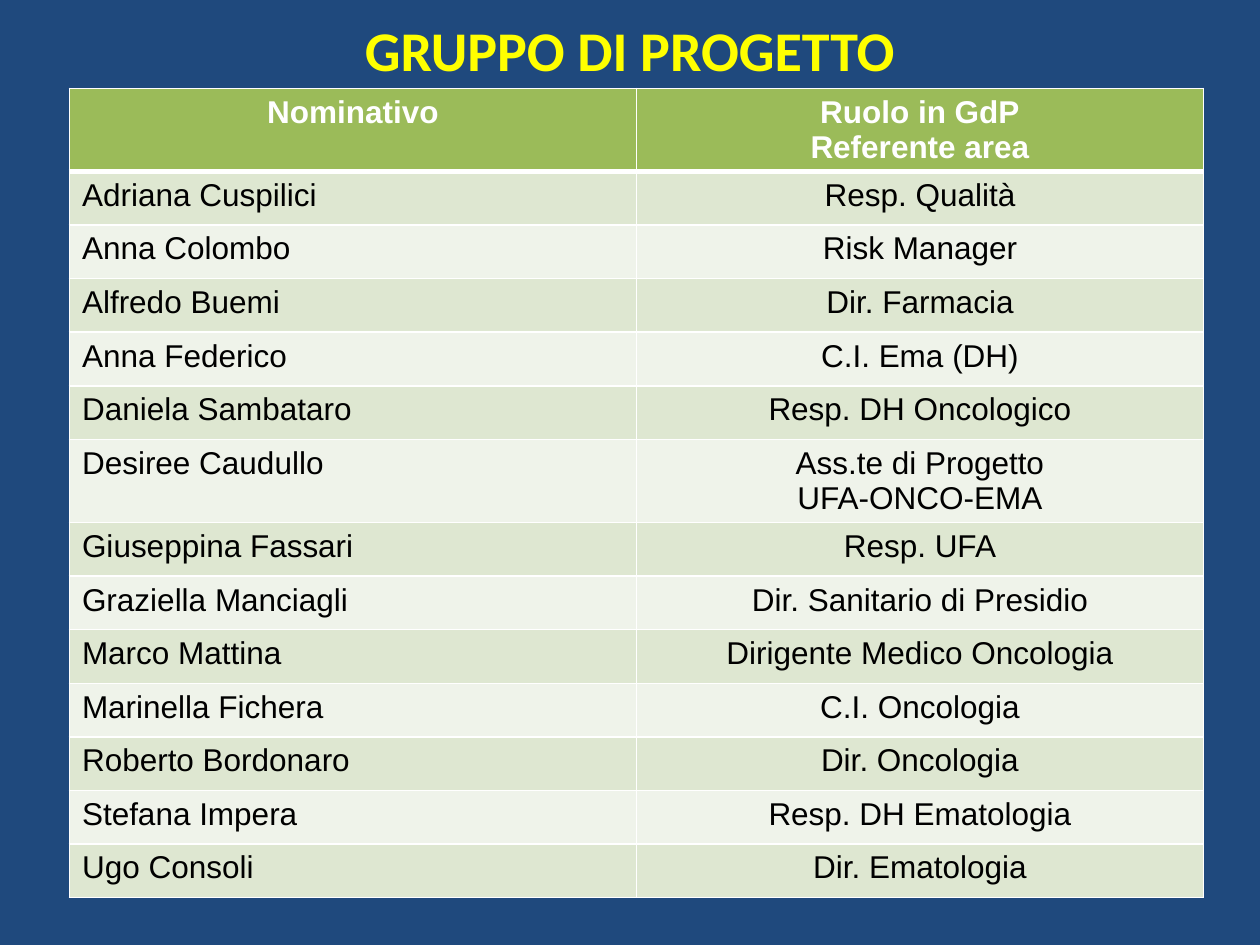
from lxml.etree import SubElement as Sub
from pptx import Presentation
from pptx.dml.color import RGBColor as RGB
from pptx.enum.text import MSO_ANCHOR as Anchor, PP_ALIGN as Align
from pptx.oxml.ns import qn
from pptx.util import Cm, Pt

NAVY = RGB(0x1F, 0x49, 0x7D)
YELLOW = RGB(0xFF, 0xFF, 0x00)
GREEN = RGB(0x9B, 0xBB, 0x59)
SAGE = RGB(0xDE, 0xE7, 0xD1)
PALE = RGB(0xEF, 0xF3, 0xEA)
WHITE = RGB(0xFF, 0xFF, 0xFF)
BLACK = RGB(0, 0, 0)

ROWS = [
    ("Nominativo", "Ruolo in GdP\nReferente area"),
    ("Adriana Cuspilici", "Resp. Qualità"),
    ("Anna Colombo", "Risk Manager"),
    ("Alfredo Buemi", "Dir. Farmacia"),
    ("Anna Federico", "C.I. Ema (DH)"),
    ("Daniela Sambataro", "Resp. DH Oncologico"),
    ("Desiree Caudullo", "Ass.te di Progetto\nUFA-ONCO-EMA"),
    ("Giuseppina Fassari", "Resp. UFA"),
    ("Graziella Manciagli", "Dir. Sanitario di Presidio"),
    ("Marco Mattina", "Dirigente Medico Oncologia"),
    ("Marinella Fichera", "C.I. Oncologia"),
    ("Roberto Bordonaro", "Dir. Oncologia"),
    ("Stefana Impera", "Resp. DH Ematologia"),
    ("Ugo Consoli", "Dir. Ematologia"),
]


def style(para, name, size, color, bold, align):
    para.alignment = align
    font = para.font
    font.name, font.size, font.bold = name, Pt(size), bold
    font.color.rgb = color


def border(cell, side, width):
    line = Sub(cell._tc.get_or_add_tcPr(), qn(f"a:ln{side}"), w=str(Pt(width)))
    Sub(Sub(line, qn("a:solidFill")), qn("a:srgbClr"), val=str(WHITE))


deck = Presentation()
deck.slide_width, deck.slide_height = Cm(25.4), Cm(19.05)
slide = deck.slides.add_slide(deck.slide_layouts[5])
slide.background.fill.solid()
slide.background.fill.fore_color.rgb = NAVY

title = slide.shapes.title
title.left, title.top, title.width, title.height = Cm(1.27), Cm(0), Cm(22.86), Cm(1.98)
title.text_frame.text = "GRUPPO DI PROGETTO"
title.text_frame.vertical_anchor = Anchor.MIDDLE
style(title.text_frame.paragraphs[0], "Calibri", 32, YELLOW, True, Align.CENTER)

table = slide.shapes.add_table(len(ROWS), 2, Cm(1.4), Cm(1.78), Cm(22.86), Cm(16.3)).table
for r, row in enumerate(ROWS):
    head = r == 0
    table.rows[r].height = Cm(1.66 if "\n" in row[1] else 1.08)
    for c, text in enumerate(row):
        cell = table.cell(r, c)
        for side in "LRTB":
            thick = (r, side) in [(0, "B"), (1, "T")]
            border(cell, side, 3 if thick else 1)
        cell.fill.solid()
        cell.fill.fore_color.rgb = GREEN if head else SAGE if r % 2 else PALE
        cell.text = text
        align = Align.CENTER if head or c else Align.LEFT
        for para in cell.text_frame.paragraphs:
            style(para, "Arial", 18, WHITE if head else BLACK, head, align)

deck.save("out.pptx")
